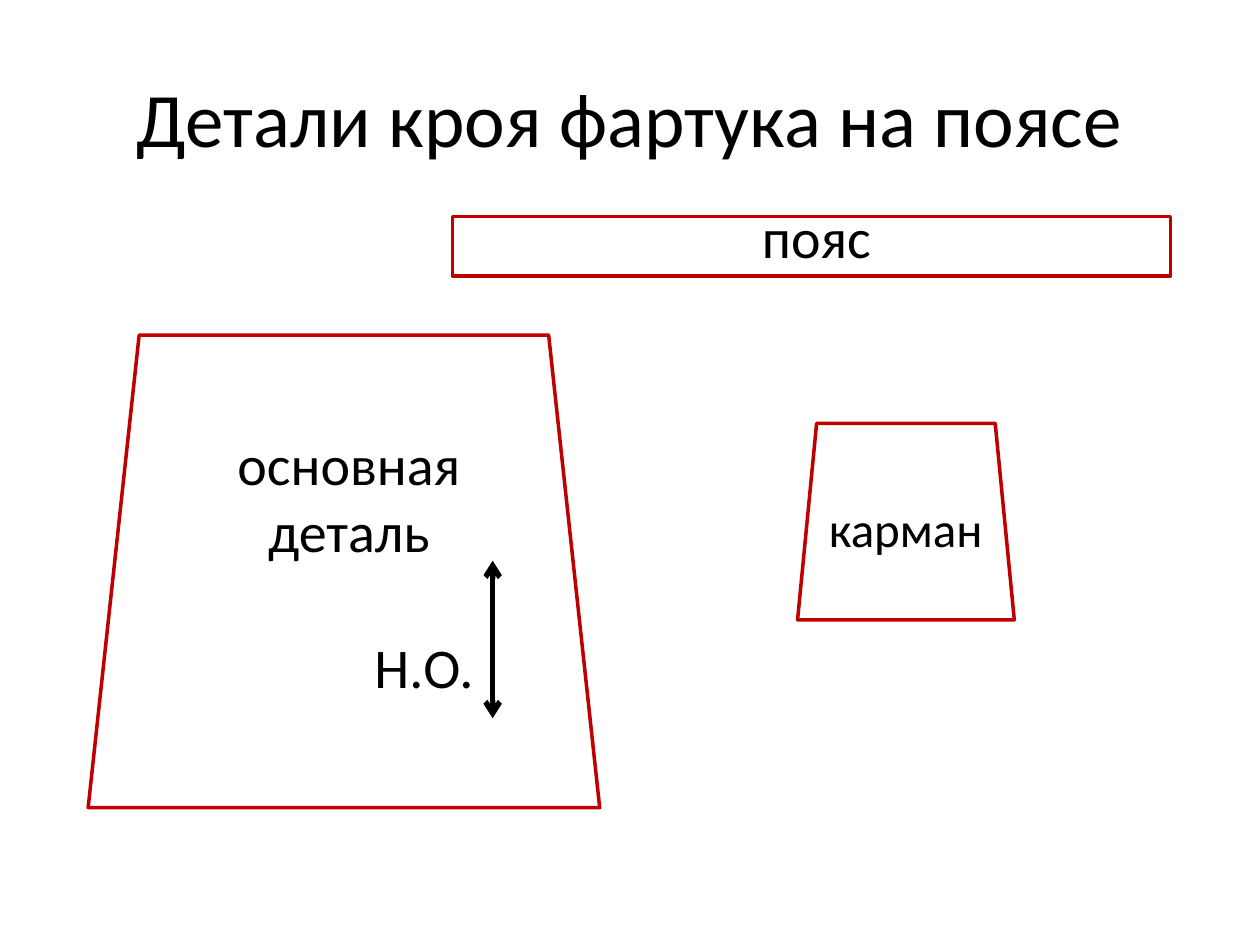
from pptx import Presentation
from pptx.dml.color import RGBColor
from pptx.enum.shapes import MSO_CONNECTOR, MSO_SHAPE
from pptx.enum.text import MSO_ANCHOR, PP_ALIGN
from pptx.oxml.ns import qn
from pptx.util import Inches, Pt
from lxml import etree

BLACK = RGBColor(0x00, 0x00, 0x00)
RED = RGBColor(0xC0, 0x00, 0x00)
FONT = "Calibri"
TRAPEZOID = MSO_SHAPE.TRAPEZOID
RECTANGLE = MSO_SHAPE.RECTANGLE
STRAIGHT = MSO_CONNECTOR.STRAIGHT
CENTER, LEFT = PP_ALIGN.CENTER, PP_ALIGN.LEFT
TOP, MIDDLE = MSO_ANCHOR.TOP, MSO_ANCHOR.MIDDLE


def add_piece(slide, kind, left, top, width, height, slant=None):
    """Outline of one pattern piece."""
    piece = slide.shapes.add_shape(
        kind, Inches(left), Inches(top), Inches(width), Inches(height))
    if slant is not None:
        piece.adjustments[0] = slant
    piece.shadow.inherit = False
    piece.fill.background()
    piece.line.color.rgb = RED
    piece.line.width = Pt(2)


def add_span(para, text, size, align):
    para.alignment = align
    span = para.add_run()
    span.text = text
    span.font.name = FONT
    span.font.size = Pt(size)
    span.font.color.rgb = BLACK


def add_label(slide, text, left, top, width, height, size=32,
              align=CENTER, anchor=TOP):
    box = slide.shapes.add_textbox(
        Inches(left), Inches(top), Inches(width), Inches(height))
    frame = box.text_frame
    frame.word_wrap = True
    frame.vertical_anchor = anchor
    add_span(frame.paragraphs[0], text, size, align)
    return frame


def add_grain_arrow(slide, x, top, bottom):
    """Vertical line with an open arrowhead at both ends."""
    arrow = slide.shapes.add_connector(
        STRAIGHT, Inches(x), Inches(top), Inches(x), Inches(bottom))
    arrow.line.color.rgb = BLACK
    arrow.line.width = Pt(3)
    line = arrow.line._get_or_add_ln()
    for end in ("a:headEnd", "a:tailEnd"):
        etree.SubElement(line, qn(end)).set("type", "arrow")
    etree.SubElement(arrow._element.spPr, qn("a:effectLst"))


def main():
    deck = Presentation()
    deck.slide_width, deck.slide_height = Inches(10), Inches(7.5)
    slide = deck.slides.add_slide(deck.slide_layouts[6])

    # Title
    add_label(slide, "Детали кроя фартука на поясе", 0.5, 0.3, 9, 1.25,
              size=44, anchor=MIDDLE)

    # Main piece with its grain direction
    add_piece(slide, TRAPEZOID, 0.7, 2.66, 4.06, 3.75, slant=0.108)
    frame = add_label(slide, "основная деталь", 1.48, 3.36, 2.58, 2.26)
    grain = frame.add_paragraph()
    grain.space_before = Pt(39)
    grain._p.get_or_add_pPr().set("marL", str(Inches(1.19)))
    add_span(grain, "Н.О.", 32, CENTER)

    # Belt
    add_piece(slide, RECTANGLE, 3.59, 1.72, 5.7, 0.47)
    add_label(slide, "пояс", 5.23, 1.56, 2.5, 0.64)

    # Pocket
    add_piece(slide, TRAPEZOID, 6.33, 3.36, 1.72, 1.56, slant=0.097)
    add_label(slide, "карман", 6.48, 3.91, 1.56, 0.57, size=28, align=LEFT)

    add_grain_arrow(slide, 3.91, 4.45, 5.7)
    deck.save("out.pptx")


if __name__ == "__main__":
    main()
